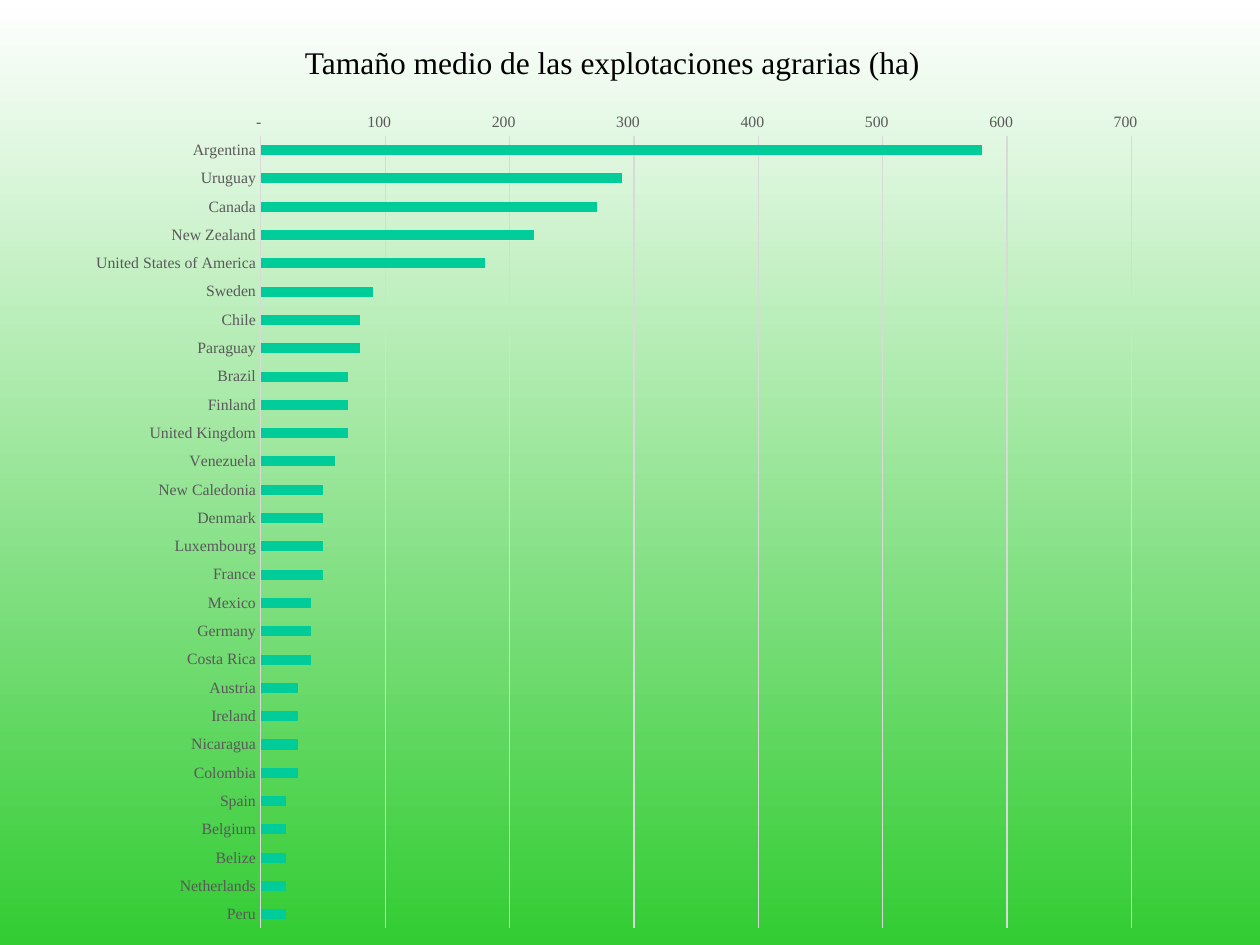
from lxml.etree import SubElement
from pptx import Presentation
from pptx.chart.data import CategoryChartData
from pptx.dml.color import RGBColor
from pptx.enum.chart import XL_CHART_TYPE, XL_TICK_MARK
from pptx.enum.text import MSO_ANCHOR, MSO_AUTO_SIZE, PP_ALIGN
from pptx.oxml import parse_xml
from pptx.oxml.ns import nsdecls, qn
from pptx.util import Inches, Pt

TITLE = "Tamaño medio de las explotaciones agrarias (ha)"
FARM_SIZES = [
    ("Argentina", 580), ("Uruguay", 290), ("Canada", 270), ("New Zealand", 220),
    ("United States of America", 180), ("Sweden", 90), ("Chile", 80),
    ("Paraguay", 80), ("Brazil", 70), ("Finland", 70), ("United Kingdom", 70),
    ("Venezuela", 60), ("New Caledonia", 50), ("Denmark", 50),
    ("Luxembourg", 50), ("France", 50), ("Mexico", 40), ("Germany", 40),
    ("Costa Rica", 40), ("Austria", 30), ("Ireland", 30), ("Nicaragua", 30),
    ("Colombia", 30), ("Spain", 20), ("Belgium", 20), ("Belize", 20),
    ("Netherlands", 20), ("Peru", 20),
]
FONT = "Times New Roman"
BACKGROUND = ["FFFFFF", "33CC33"]
BLACK, GREY, PALE, TEAL = "000000", "595959", "D9D9D9", "00CC99"
NUMBER_FORMAT = '_-* #,##0\\ _€_-;\\-* #,##0\\ _€_-;_-* "-"?'
TITLE_BOX = (2.32, 0.29, 7.01, 0.4)
CHART_BOX = (0.59, 0.76, 8.74, 6.74)
PLOT_BOX = (2.07, 1.08, 6.91, 6.29)


def color(value):
    return RGBColor.from_string(value)


def apply(target, values):
    for name, value in values.items():
        setattr(target, name, value)


def style_font(font, size, value):
    apply(font, {"name": FONT, "size": Pt(size), "bold": False})
    font.color.rgb = color(value)


def style_line(line):
    line.color.rgb = color(PALE)
    line.width = Pt(0.75)


def paint_background(page):
    fill = page.background.fill
    fill.gradient()
    fill.gradient_angle = 270
    for stop, value, position in zip(fill.gradient_stops, BACKGROUND, (0, 1)):
        stop.color.rgb = color(value)
        stop.position = position


def add_title(page):
    box = page.shapes.title
    apply(box, dict(zip(("left", "top", "width", "height"), map(Inches, TITLE_BOX))))
    frame = box.text_frame
    apply(frame, {
        "text": TITLE, "word_wrap": True, "vertical_anchor": MSO_ANCHOR.TOP,
        "auto_size": MSO_AUTO_SIZE.SHAPE_TO_FIT_TEXT,
        "margin_left": Inches(0.1), "margin_right": Inches(0.1),
        "margin_top": Inches(0.05), "margin_bottom": Inches(0.05),
    })
    para = frame.paragraphs[0]
    apply(para, {"alignment": PP_ALIGN.LEFT, "line_spacing": 1.0, "space_before": Pt(0)})
    style_font(para.runs[0].font, 18, BLACK)


def place_plot(chart):
    left, top, width, height = CHART_BOX
    plot_left, plot_top, plot_width, plot_height = PLOT_BOX
    area = chart.element.find(".//" + qn("c:plotArea"))
    for old in area.findall(qn("c:layout")):
        area.remove(old)
    layout = parse_xml(f"<c:layout {nsdecls('c')}/>")
    manual = SubElement(layout, qn("c:manualLayout"))
    settings = {
        "layoutTarget": "inner", "xMode": "edge", "yMode": "edge",
        "x": (plot_left - left) / width, "y": (plot_top - top) / height,
        "w": plot_width / width, "h": plot_height / height,
    }
    for name, value in settings.items():
        SubElement(manual, qn(f"c:{name}")).set("val", str(value))
    area.insert(0, layout)


def add_farm_chart(page):
    data = CategoryChartData()
    data.categories = [country for country, size in FARM_SIZES]
    data.add_series("Series 1", [size for country, size in FARM_SIZES])
    chart = page.shapes.add_chart(
        XL_CHART_TYPE.BAR_CLUSTERED, *map(Inches, CHART_BOX), data
    ).chart
    apply(chart, {"has_title": False, "has_legend": False})
    style_font(chart.font, 10, BLACK)

    plot = chart.plots[0]
    apply(plot, {"gap_width": 182, "vary_by_categories": False})
    bars = plot.series[0].format.fill
    bars.solid()
    bars.fore_color.rgb = color(TEAL)

    countries, hectares = chart.category_axis, chart.value_axis
    for axis in (countries, hectares):
        apply(axis, {"major_tick_mark": XL_TICK_MARK.NONE,
                     "minor_tick_mark": XL_TICK_MARK.NONE})
        style_font(axis.tick_labels.font, 9, GREY)
    apply(countries, {"reverse_order": True, "has_major_gridlines": False})
    style_line(countries.format.line)
    apply(hectares, {"minimum_scale": 0, "maximum_scale": 700,
                     "major_unit": 100, "has_major_gridlines": True})
    hectares.format.line.fill.background()
    style_line(hectares.major_gridlines.format.line)
    apply(hectares.tick_labels, {"number_format": NUMBER_FORMAT,
                                 "number_format_is_linked": False})
    place_plot(chart)


def main():
    deck = Presentation()
    apply(deck, {"slide_width": Inches(10), "slide_height": Inches(7.5)})
    page = deck.slides.add_slide(deck.slide_layouts[5])
    paint_background(page)
    add_title(page)
    add_farm_chart(page)
    deck.save("out.pptx")


if __name__ == "__main__":
    main()
